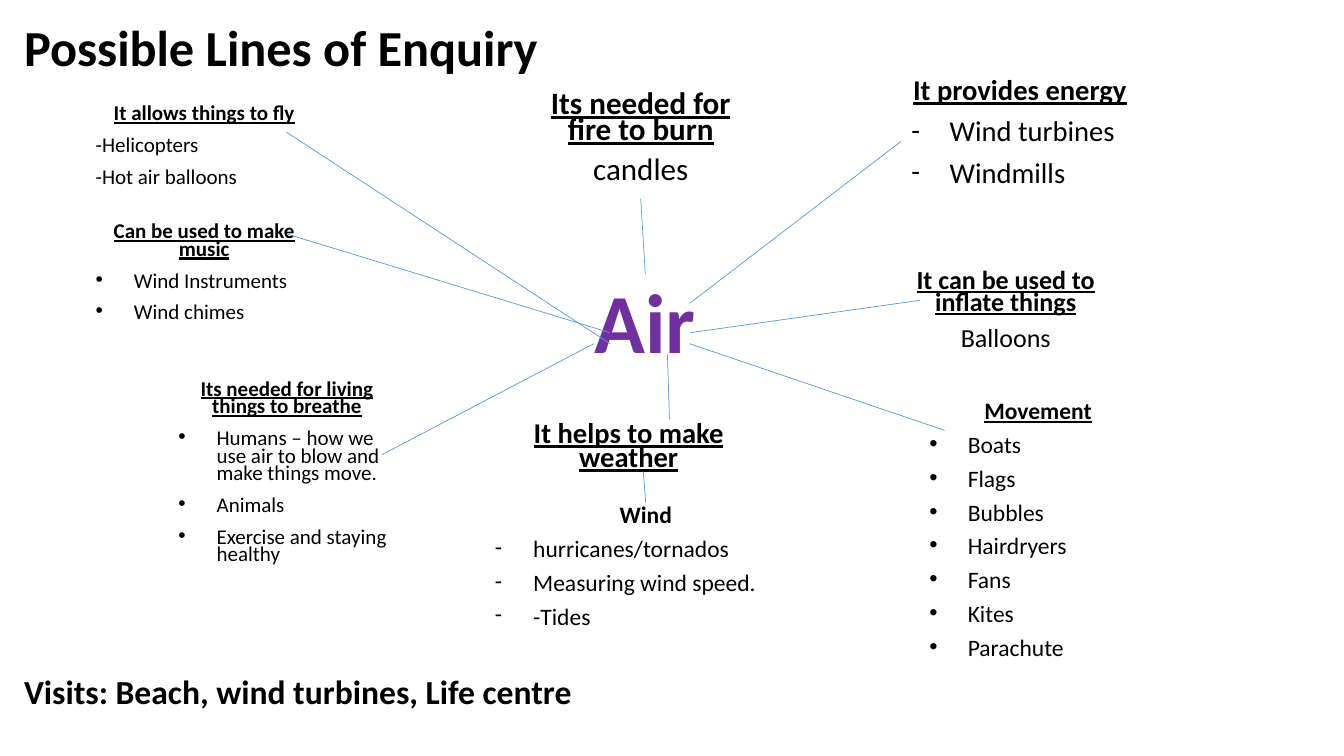
from lxml import etree
from pptx import Presentation
from pptx.dml.color import RGBColor
from pptx.enum.shapes import MSO_CONNECTOR
from pptx.enum.text import MSO_ANCHOR, PP_ALIGN
from pptx.oxml.ns import qn
from pptx.util import Pt

PX = 9144  # 100 px to the inch
BLACK, PURPLE, BLUE = "000000", "7030A0", "5B9BD5"
INDENT = 38
TOP, LEFT, BOTTOM = 0, 1, 2

# name: box, size, line spacing, heading, heading underlined, item mark, items
# An item mark of "center" or "left" aligns plain items; others are bullets.
TOPICS = {
    "breathe": ((167, 374, 235, 213), 15, 0.7,
                "Its needed for living things to breathe", True, "•",
                ["Humans – how we use air to blow and make things move.",
                 "Animals", "Exercise and staying healthy"]),
    "fly": ((85, 101, 235, 93), 15, 0.7, "It allows things to fly", True,
            "left", ["-Helicopters", "-Hot air balloons"]),
    "inflate": ((880, 265, 235, 93), 18.6, 0.7,
                "It can be used to inflate things", True,
                "center", ["Balloons"]),
    "fire": ((518, 88, 235, 109), 22.2, 0.7, "Its needed for fire to burn",
             True, "center", ["candles"]),
    "weather": ((506, 416, 235, 61), 20.4, 0.7, "It helps to make weather",
                True, "center", []),
    "energy": ((894, 73, 235, 134), 20.4, 0.8, "It provides energy", True,
               "-", ["Wind turbines", "Windmills"]),
    "wind": ((481, 499, 319, 137), 16.8, 0.7, "Wind", False, "-",
             ["hurricanes/tornados", "Measuring wind speed.", "-Tides"]),
    "movement": ((912, 396, 235, 276), 16.8, 0.7, "Movement", True, "•",
                 ["Boats", "Flags", "Bubbles", "Hairdryers", "Fans", "Kites",
                  "Parachute"]),
    "music": ((85, 218, 235, 113), 15, 0.7, "Can be used to make music", True,
              "•", ["Wind Instruments", "Wind chimes"]),
}

# start, end, topic and side joined at the start, at the end
LINES = [
    ((641, 272), (635, 197), ("air", TOP), ("fire", BOTTOM)),
    ((684, 301), (894, 140), None, ("energy", LEFT)),
    ((685, 330), (912, 298), None, None),
    ((684, 341), (937, 427), None, None),
    ((662, 352), (664, 416), None, None),
    ((638, 468), (641, 499), None, ("wind", TOP)),
    ((589, 341), (379, 451), None, None),
    ((605, 341), (284, 131), None, None),
    ((284, 232), (605, 330), None, None),
]


def rgb(color):
    return RGBColor.from_string(color)


def add_box(slide, box):
    shape = slide.shapes.add_textbox(*(value * PX for value in box))
    shape.text_frame.word_wrap = True
    return shape


def add_bullet(paragraph, mark):
    properties = paragraph._p.get_or_add_pPr()
    properties.set("marL", str(INDENT * PX))
    properties.set("indent", str(-INDENT * PX))
    font = etree.SubElement(properties, qn("a:buFont"))
    font.set("typeface", "Arial" if mark == "•" else "Calibri")
    etree.SubElement(properties, qn("a:buChar")).set("char", mark)


def style_paragraph(paragraph, text, size, spacing, align=PP_ALIGN.LEFT,
                    bold=False, underline=False, color=BLACK, before=10):
    paragraph.text = text
    paragraph.alignment = align
    paragraph.line_spacing = spacing
    paragraph.space_before = Pt(before)
    font = paragraph.font
    font.name = "Calibri"
    font.size = Pt(size)
    font.bold = bold
    font.underline = underline
    font.color.rgb = rgb(color)


def add_label(slide, box, text, size, **style):
    """Add a box with one bold paragraph."""
    shape = add_box(slide, box)
    style_paragraph(shape.text_frame.paragraphs[0], text, size, 0.9,
                    bold=True, **style)
    return shape


def add_topic(slide, box, size, spacing, heading, underline, mark, items):
    """Add a centred heading with its items below."""
    shape = add_box(slide, box)
    frame = shape.text_frame
    style_paragraph(frame.paragraphs[0], heading, size, spacing,
                    PP_ALIGN.CENTER, bold=True, underline=underline)
    align = PP_ALIGN.CENTER if mark == "center" else PP_ALIGN.LEFT
    for item in items:
        paragraph = frame.add_paragraph()
        if mark not in ("center", "left"):
            add_bullet(paragraph, mark)
        style_paragraph(paragraph, item, size, spacing, align)
    return shape


def add_line(slide, shapes, start, end, start_joint, end_joint):
    points = (value * PX for value in start + end)
    line = slide.shapes.add_connector(MSO_CONNECTOR.STRAIGHT, *points)
    line.line.color.rgb = rgb(BLUE)
    line.line.width = Pt(0.5)
    etree.SubElement(line._element.spPr, qn("a:effectLst"))
    if start_joint:
        name, side = start_joint
        line.begin_connect(shapes[name], side)
    if end_joint:
        name, side = end_joint
        line.end_connect(shapes[name], side)


def main():
    presentation = Presentation()
    presentation.slide_width = 1333 * PX
    presentation.slide_height = 750 * PX
    slide = presentation.slides.add_slide(presentation.slide_layouts[6])

    air = add_label(slide, (326, 272, 628, 102), "Air", 60,
                    align=PP_ALIGN.CENTER, color=PURPLE, before=0)
    air.text_frame.vertical_anchor = MSO_ANCHOR.BOTTOM
    shapes = {"air": air}
    for name, topic in TOPICS.items():
        shapes[name] = add_topic(slide, *topic)
    for line in LINES:
        add_line(slide, shapes, *line)
    add_label(slide, (14, 18, 898, 61), "Possible Lines of Enquiry", 36)
    add_label(slide, (14, 665, 898, 61),
              "Visits: Beach, wind turbines, Life centre", 24)

    presentation.save("out.pptx")


if __name__ == "__main__":
    main()
